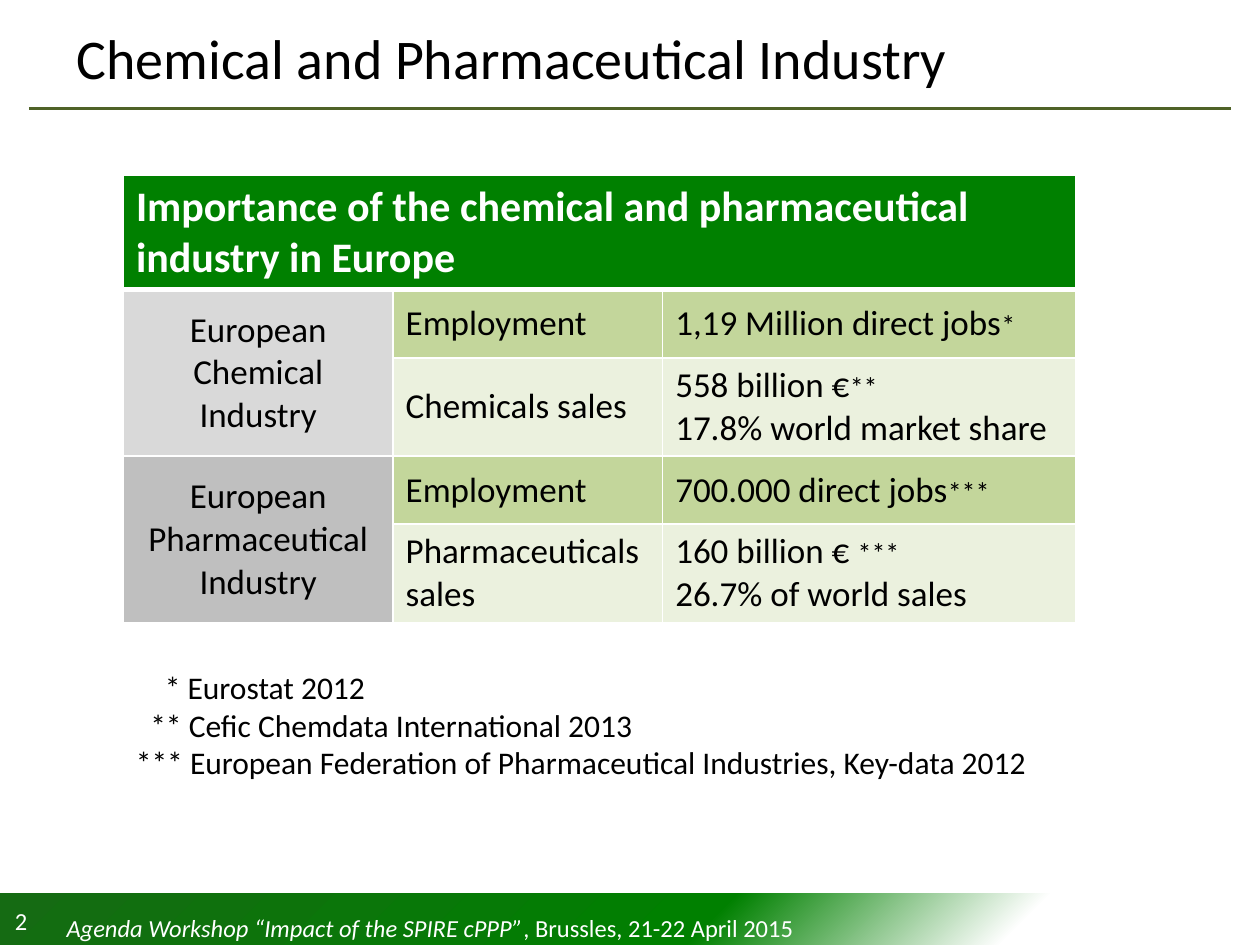
import pptx
import pptx.util
import pptx.dml.color
import pptx.enum.shapes
import pptx.enum.text
import pptx.oxml
import pptx.oxml.ns

COLORS = {
    "black": "000000", "white": "FFFFFF", "rule": "4F6228",
    "green": "008000", "dark_green": "156B13",
    "light_grey": "D9D9D9", "grey": "BFBFBF",
    "strong_row": "C3D69B", "pale_row": "EBF1DE",
}
COLUMNS, ROWS = 100, 75  # square grid cells, a tenth of an inch each
ANCHOR = pptx.enum.text.MSO_ANCHOR
CENTER = pptx.enum.text.PP_ALIGN.CENTER
BREAK = ("\n", {})
MARK = {"size": 16}


def rgb(name):
    return pptx.dml.color.RGBColor.from_string(COLORS[name])


def element(xml):
    """Parse a drawing element, adding its namespace declaration."""
    head, rest = xml.split(">", 1)
    return pptx.oxml.parse_xml(f"{head} {pptx.oxml.ns.nsdecls('a')}>{rest}")


class SlideBuilder:
    font = "Calibri"

    def __init__(self):
        self.deck = pptx.Presentation()
        self.deck.slide_width = pptx.util.Inches(10)
        self.deck.slide_height = pptx.util.Inches(7.5)
        self.slide = self.deck.slides.add_slide(self.deck.slide_layouts[6])

    def x(self, columns):
        return round(self.deck.slide_width * columns / COLUMNS)

    def y(self, rows):
        return round(self.deck.slide_height * rows / ROWS)

    def place(self, left, top, width, height):
        return self.x(left), self.y(top), self.x(width), self.y(height)

    def add_runs(self, paragraph, runs, size, color="black", bold=False):
        for words, style in runs:
            if words == "\n":
                paragraph.add_line_break()
                continue
            run = paragraph.add_run()
            run.text = words
            run.font.name = self.font
            run.font.size = pptx.util.Pt(style.get("size", size))
            run.font.bold = bold
            run.font.italic = style.get("italic", False)
            run.font.color.rgb = rgb(color)

    def text(self, area, paragraphs, size, color="black", anchor=ANCHOR.MIDDLE):
        """Add a text box; each paragraph is an indent in columns and its runs."""
        frame = self.slide.shapes.add_textbox(*self.place(*area)).text_frame
        frame.word_wrap = True
        frame.vertical_anchor = anchor
        for number, (indent, runs) in enumerate(paragraphs):
            paragraph = frame.add_paragraph() if number else frame.paragraphs[0]
            if indent:
                paragraph._p.get_or_add_pPr().set("marL", str(self.x(indent)))
            self.add_runs(paragraph, runs, size, color)

    def rule(self, left, right, top, color, weight):
        line = self.slide.shapes.add_connector(
            pptx.enum.shapes.MSO_CONNECTOR.STRAIGHT,
            self.x(left), self.y(top), self.x(right), self.y(top))
        line.line.color.rgb = rgb(color)
        line.line.width = pptx.util.Pt(weight)
        line._element.spPr.append(element("<a:effectLst></a:effectLst>"))

    def glow_band(self, area, stops):
        """Add a band with a gradient that spreads from its lower right corner."""
        band = self.slide.shapes.add_shape(
            pptx.enum.shapes.MSO_SHAPE.RECTANGLE, *self.place(*area))
        band.shadow.inherit = False
        band.line.fill.background()
        stop_list = "".join(
            f'<a:gs pos="{share * 1000}"><a:srgbClr val="{COLORS[color]}"/></a:gs>'
            for share, color in stops)
        gradient = element(
            f'<a:gradFill rotWithShape="1"><a:gsLst>{stop_list}</a:gsLst>'
            '<a:path path="circle"><a:fillToRect l="100000" t="100000"/></a:path>'
            "</a:gradFill>")
        band._element.spPr.find(pptx.oxml.ns.qn("a:prstGeom")).addnext(gradient)

    def borders(self, cell, top, bottom):
        weights = {"L": 1, "R": 1, "T": top, "B": bottom}
        for position, (side, weight) in enumerate(weights.items()):
            cell._tc.get_or_add_tcPr().insert(position, element(
                f'<a:ln{side} w="{pptx.util.Pt(weight)}"><a:solidFill>'
                f'<a:srgbClr val="{COLORS["white"]}"/></a:solidFill></a:ln{side}>'))

    def table(self, left, top, widths, heights, merges, fills):
        area = self.place(left, top, sum(widths), sum(heights))
        grid = self.slide.shapes.add_table(len(heights), len(widths), *area).table
        for column, width in zip(grid.columns, widths):
            column.width = self.x(width)
        for row, height in zip(grid.rows, heights):
            row.height = self.y(height)
        for r, row_fills in enumerate(fills):
            for c, color in enumerate(row_fills):
                cell = grid.cell(r, c)
                cell.fill.solid()
                cell.fill.fore_color.rgb = rgb(color)
                cell.vertical_anchor = ANCHOR.MIDDLE
                self.borders(cell, 3 if r == 1 else 1, 3 if r == 0 else 1)
        for start, end in merges:
            grid.cell(*start).merge(grid.cell(*end))
        return grid

    def save(self):
        self.deck.save("out.pptx")


def main():
    page = SlideBuilder()

    page.glow_band((0, 70.9, 100, 4.4), [
        (0, "white"), (20, "white"), (44, "green"), (100, "dark_green")])
    page.text((0.2, 70.9, 6.5, 4.4), [(0, [("2", {})])], 14, "white")
    page.rule(2.3, 97.7, 8.6, "rule", 1.5)
    page.text((5.1, 0.6, 86.6, 7.8),
              [(0, [("Chemical and Pharmaceutical Industry", {})])], 32)

    strong, pale = ["strong_row"] * 2, ["pale_row"] * 2
    importance = page.table(
        9.8, 13.9, [21.4, 21.4, 32.8], [9.1, 5.4, 7.8, 5.4, 7.8],
        merges=[((0, 0), (0, 2)), ((1, 0), (2, 0)), ((3, 0), (4, 0))],
        fills=[["green"] * 3,
               ["light_grey"] + strong, ["light_grey"] + pale,
               ["grey"] + strong, ["grey"] + pale])

    heading = [("Importance of the chemical and pharmaceutical ", {}), BREAK,
               ("industry in Europe", {})]
    page.add_runs(importance.cell(0, 0).text_frame.paragraphs[0],
                  heading, 24, "white", bold=True)

    for row, sector in [(1, "European Chemical Industry"),
                        (3, "European Pharmaceutical Industry")]:
        paragraph = importance.cell(row, 0).text_frame.paragraphs[0]
        paragraph.alignment = CENTER
        page.add_runs(paragraph, [(sector, {})], 20)

    figures = [
        ("Employment", [("1,19 Million direct jobs", {}), ("*", MARK)]),
        ("Chemicals sales", [("558 billion €", {}), ("**", MARK), BREAK,
                             ("17.8% world market share", {})]),
        ("Employment", [("700.000 direct jobs", {}), ("***", MARK)]),
        ("Pharmaceuticals sales", [("160 billion € ", {}), ("***", MARK), BREAK,
                                   ("26.7% of world sales", {})]),
    ]
    for row, (measure, value) in enumerate(figures, start=1):
        for column, runs in [(1, [(measure, {})]), (2, value)]:
            page.add_runs(importance.cell(row, column).text_frame.paragraphs[0],
                          runs, 20)

    page.text((9.8, 52.5, 73.6, 10.1), [
        (2.3, [("* Eurostat 2012", {})]),
        (1.15, [("** Cefic Chemdata International 2013", {})]),
        (0, [("*** European Federation of Pharmaceutical Industries, "
              "Key-data 2012", {})]),
    ], 18, anchor=ANCHOR.TOP)

    page.text((4.3, 71.4, 60.6, 4.4), [(0, [
        ("Agenda Workshop “Impact of the SPIRE cPPP”", {"italic": True}),
        (", Brussles, 21-22 April 2015", {})])], 14, "white")

    page.save()


if __name__ == "__main__":
    main()
